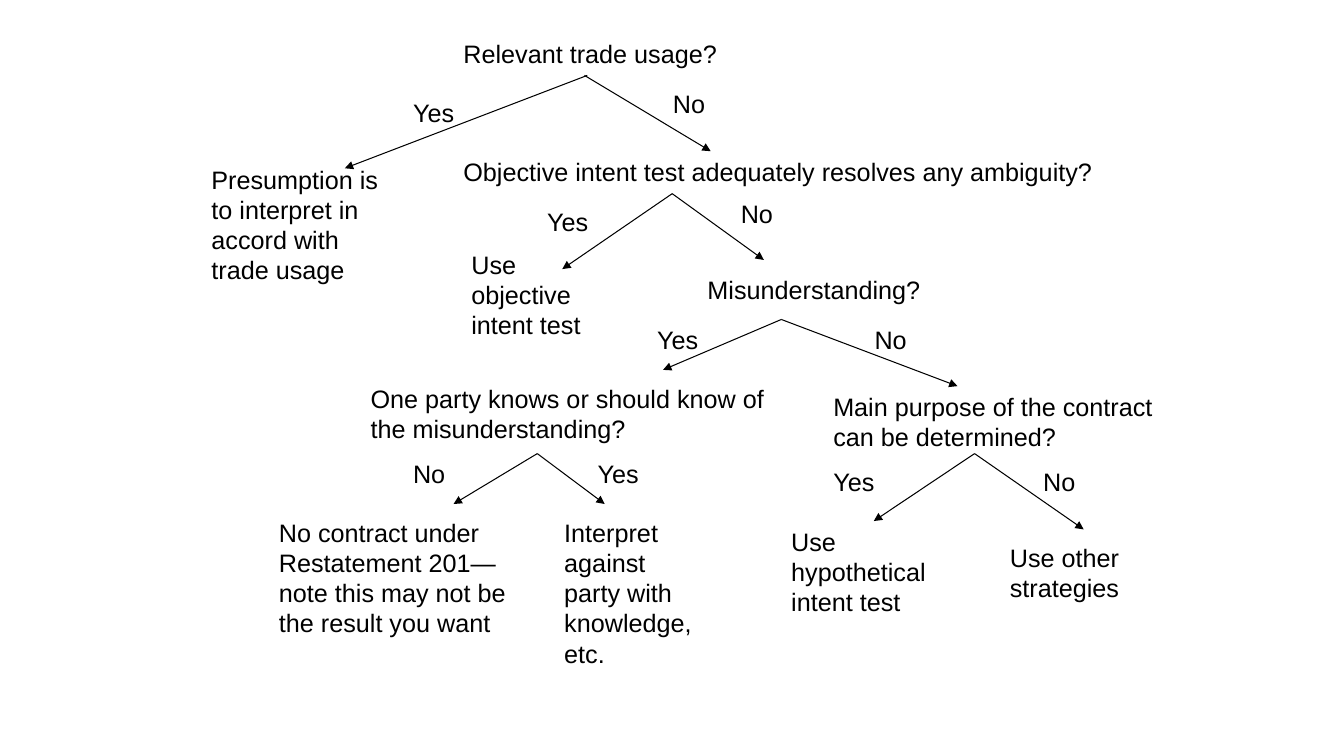
from dataclasses import dataclass

from lxml import etree
from pptx import Presentation
from pptx import util as u
from pptx.dml import color
from pptx.enum import shapes, text
from pptx.oxml import ns


@dataclass(frozen=True)
class Theme:
    ink: color.RGBColor = color.RGBColor(0, 0, 0)
    paper: color.RGBColor = color.RGBColor(255, 255, 255)
    font: str = "Arial"
    size: u.Pt = u.Pt(18)
    line: u.Pt = u.Pt(0.75)


theme = Theme()
FONT = {"name": theme.font, "size": theme.size}
FRAME = {"word_wrap": True, "auto_size": text.MSO_AUTO_SIZE.SHAPE_TO_FIT_TEXT}
ONE_LINE, NEXT_LINE = 1.02, 0.77

prs = Presentation()
prs.slide_width, prs.slide_height = u.Cm(33.87), u.Cm(19.05)
s = prs.slides.add_slide(prs.slide_layouts[6])
s.background.fill.solid()
s.background.fill.fore_color.rgb = theme.paper


def add_text(words, x, y, width, lines=1):
    height = ONE_LINE + NEXT_LINE * (lines - 1)
    sp = s.shapes.add_textbox(u.Cm(x), u.Cm(y), u.Cm(width), u.Cm(height))
    tf = sp.text_frame
    for name, value in FRAME.items():
        setattr(tf, name, value)
    r = tf.paragraphs[0].add_run()
    r.text = words
    for name, value in FONT.items():
        setattr(r.font, name, value)
    r.font.color.rgb = theme.ink


def add_arrow(start, tip):
    cx = s.shapes.add_connector(
        shapes.MSO_CONNECTOR.STRAIGHT, *[u.Cm(v) for v in (*start, *tip)])
    cx.line.color.rgb = theme.ink
    cx.line.width = theme.line
    etree.SubElement(cx.line._get_or_add_ln(), ns.qn("a:tailEnd"), type="triangle")
    etree.SubElement(cx._element.spPr, ns.qn("a:effectLst"))


nodes = [
    ("Relevant trade usage?", 11.43, 0.84, 7.19, 1),
    ("Presumption is to interpret in accord with trade usage", 5.08, 4.01, 4.88, 4),
    ("Objective intent test adequately resolves any ambiguity?", 11.43, 3.81, 17.58, 1),
    ("Use objective intent test", 11.63, 6.15, 4.24, 3),
    ("Misunderstanding?", 17.58, 6.78, 6.78, 1),
    ("One party knows or should know of the misunderstanding?", 9.09, 9.53, 10.59, 2),
    ("Main purpose of the contract can be determined?", 20.75, 9.73, 8.89, 2),
    ("No contract under Restatement 201—note this may not be the result you want",
     6.78, 12.9, 6.35, 4),
    ("Interpret against party with knowledge, etc.", 13.97, 12.9, 3.81, 5),
    ("Use hypothetical intent test", 19.69, 13.13, 4.65, 3),
    ("Use other strategies", 25.2, 13.54, 3.81, 2),
]
for node in nodes:
    add_text(*node)

branches = [
    ((14.8, 1.9), (8.69, 4.24), ("Yes", 10.16, 2.34, 2.54)),
    ((14.73, 1.9), (17.91, 3.81), ("No", 16.71, 2.11, 1.7)),
    ((16.94, 4.88), (14.17, 6.78), ("Yes", 13.54, 5.08, 2.54)),
    ((16.94, 4.88), (19.25, 6.55), ("No", 18.42, 4.88, 1.7)),
    ((19.69, 8.05), (16.71, 9.32), ("Yes", 16.31, 8.05, 2.54)),
    ((19.69, 8.05), (24.13, 9.73), ("No", 21.79, 8.05, 1.7)),
    ((13.54, 11.43), (11.43, 12.7), ("No", 10.16, 11.43, 2.54)),
    ((13.54, 11.43), (15.24, 12.7), ("Yes", 14.81, 11.43, 2.54)),
    ((24.56, 11.43), (22.02, 13.13), ("Yes", 20.75, 11.63, 2.54)),
    ((24.56, 11.43), (27.31, 13.34), ("No", 26.04, 11.63, 1.7)),
]
for start, tip, answer in branches:
    add_arrow(start, tip)
    add_text(*answer)

prs.save("out.pptx")
